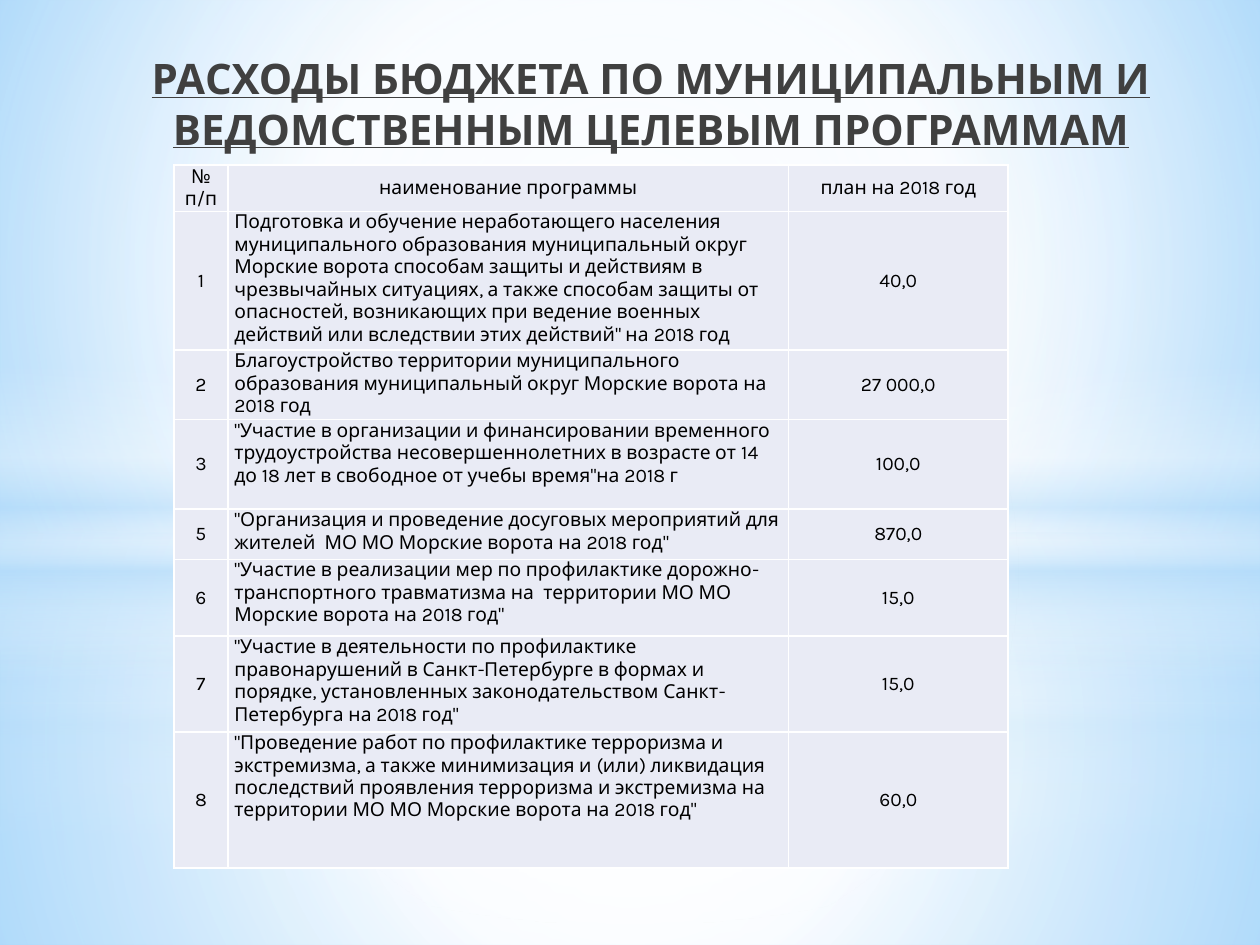
import pptx
import pptx.util
from pptx.dml.color import RGBColor
from pptx.enum.shapes import MSO_SHAPE
from pptx.enum.text import MSO_ANCHOR, PP_ALIGN
from pptx.oxml import parse_xml
from pptx.oxml.ns import nsdecls, qn

Inches = pptx.util.Inches
WIDTH, HEIGHT = 10, 7.5
FONT = "Karla"
COLORS = {
    "white": "FFFFFF", "haze": "B4DCFA", "sky": "9ED5FF", "deep": "5BB9FF",
    "title": "404040", "text": "000000", "cell": "E9EBF5",
}

TITLE = "РАСХОДЫ БЮДЖЕТА ПО МУНИЦИПАЛЬНЫМ И ВЕДОМСТВЕННЫМ ЦЕЛЕВЫМ ПРОГРАММАМ"
COLUMNS = [0.43, 4.45, 1.74]
HEADER = ("№ п/п", "наименование программы", "план на 2018 год")
HEADER_HEIGHT = 0.35
PROGRAMS = [  # row height, number, name, plan
    (1.07, "1", 'Подготовка и обучение неработающего населения муниципального образования '
     'муниципальный округ Морские ворота способам защиты и действиям в чрезвычайных '
     'ситуациях, а также способам защиты от опасностей, возникающих при ведение военных '
     'действий или вследствии этих действий" на 2018 год', "40,0"),
    (0.53, "2", 'Благоустройство территории муниципального образования муниципальный округ '
     'Морские ворота на 2018 год', "27 000,0"),
    (0.71, "3", '"Участие в организации и финансировании временного трудоустройства '
     'несовершеннолетних в возрасте от 14 до 18 лет в свободное от учебы время"на 2018 г',
     "100,0"),
    (0.4, "5", '"Организация и проведение досуговых мероприятий для жителей  МО МО '
     'Морские ворота на 2018 год"', "870,0"),
    (0.61, "6", '"Участие в реализации мер по профилактике дорожно-транспортного травматизма '
     'на  территории МО МО Морские ворота на 2018 год"', "15,0"),
    (0.76, "7", '"Участие в деятельности по профилактике правонарушений в Санкт-Петербурге '
     'в формах и порядке, установленных законодательством Санкт-Петербурга на 2018 год"',
     "15,0"),
    (1.08, "8", '"Проведение работ по профилактике терроризма и экстремизма, а также '
     'минимизация и (или) ликвидация последствий проявления терроризма и экстремизма на '
     'территории МО МО Морские ворота на 2018 год"', "60,0"),
]

# Gradient stops: position, colour, opacity (all in percent)
BACKGROUND = [(0, "sky", 100), (60, "white", 100), (100, "deep", 100)]
BAND = [(0, "white", 0), (29, "white", 30), (45, "haze", 40),
        (55, "white", 26), (65, "haze", 60), (100, "white", 0)]
CENTER = (50, 50, 50, 50)
# Each glow layer: horizon, band top, extra opacity, end of the ellipse's fade
GLOWS = [(5.58, 4.12, 0, 56), (4.23, 2.9, 1, 54)]


def paint_gradient(holder, stops, focus=None):
    """Swap the holder's solid fill for a radial gradient, or a vertical one without focus."""
    marks = "".join(
        f'<a:gs pos="{place * 1000}"><a:srgbClr val="{COLORS[color]}">'
        f'<a:alpha val="{opacity * 1000}"/></a:srgbClr></a:gs>'
        for place, color, opacity in stops)
    if focus:
        left, top, right, bottom = (share * 1000 for share in focus)
        course = (f'<a:path path="circle"><a:fillToRect l="{left}" t="{top}" '
                  f'r="{right}" b="{bottom}"/></a:path>')
    else:
        course = '<a:lin ang="5400000" scaled="0"/>'
    gradient = parse_xml(f'<a:gradFill {nsdecls("a")} rotWithShape="1">'
                         f'<a:gsLst>{marks}</a:gsLst>{course}</a:gradFill>')
    holder.replace(holder.find(qn("a:solidFill")), gradient)


def add_glow(page, kind, top, height, stops, focus=None):
    shape = page.shapes.add_shape(kind, 0, Inches(top), Inches(WIDTH), Inches(height))
    shape.shadow.inherit = False
    shape.line.fill.background()
    shape.fill.solid()
    paint_gradient(shape.element.spPr, stops, focus)


def write(frame, text, size=11, color="text", bold=False, underline=False,
          align=PP_ALIGN.CENTER):
    frame.word_wrap = True
    para = frame.paragraphs[0]
    para.alignment = align
    span = para.add_run()
    span.text = text
    font = span.font
    font.name, font.size = FONT, pptx.util.Pt(size)
    font.bold, font.underline = bold, underline
    font.color.rgb = RGBColor.from_string(COLORS[color])


def style_cell(cell):
    cell.margin_left = cell.margin_right = Inches(0.05)
    cell.margin_top = cell.margin_bottom = 0
    cell.fill.solid()
    cell.fill.fore_color.rgb = RGBColor.from_string(COLORS["cell"])
    properties = cell._tc.get_or_add_tcPr()
    for index, side in enumerate("LRTB"):
        properties.insert(index, parse_xml(
            f'<a:ln{side} {nsdecls("a")} w="12700"><a:solidFill>'
            f'<a:srgbClr val="{COLORS["white"]}"/></a:solidFill></a:ln{side}>'))


def add_programs(page):
    heights = [HEADER_HEIGHT] + [program[0] for program in PROGRAMS]
    rows = [HEADER] + [program[1:] for program in PROGRAMS]
    table = page.shapes.add_table(
        len(rows), len(COLUMNS), Inches(1.38), Inches(1.31),
        Inches(sum(COLUMNS)), Inches(sum(heights))).table
    table.first_row = table.horz_banding = False
    for column, width in zip(table.columns, COLUMNS):
        column.width = Inches(width)
    for r, (height, row) in enumerate(zip(heights, rows)):
        table.rows[r].height = Inches(height)
        for c, text in enumerate(row):
            cell = table.cell(r, c)
            is_name = r > 0 and c == 1
            style_cell(cell)
            cell.vertical_anchor = MSO_ANCHOR.TOP if is_name else MSO_ANCHOR.MIDDLE
            write(cell.text_frame, text,
                  align=PP_ALIGN.LEFT if is_name else PP_ALIGN.CENTER)


def main():
    deck = pptx.Presentation()
    deck.slide_width, deck.slide_height = Inches(WIDTH), Inches(HEIGHT)
    page = deck.slides.add_slide(deck.slide_layouts[6])

    page.background.fill.solid()
    paint_gradient(page.element.find(".//" + qn("p:bgPr")), BACKGROUND, (20, 10, 20, 60))
    for horizon, band_top, extra, fade in GLOWS:
        ground = [(0, "white", 91 + extra), (37, "white", 76 + extra), (100, "haze", 79 + extra)]
        heaven = [(0, "white", 89 + extra), (48, "white", 62 + extra), (100, "haze", 79 + extra)]
        add_glow(page, MSO_SHAPE.RECTANGLE, horizon, HEIGHT - horizon, ground, CENTER)
        add_glow(page, MSO_SHAPE.RECTANGLE, 0, horizon, heaven, CENTER)
        add_glow(page, MSO_SHAPE.RECTANGLE, band_top, 2.5, BAND)
        add_glow(page, MSO_SHAPE.OVAL, 1.75, 5.58,
                 [(0, "white", 100), (fade, "white", 0)], CENTER)

    box = page.shapes.add_textbox(Inches(0.34), Inches(0.99), Inches(9.65), Inches(1.02))
    frame = box.text_frame
    frame.vertical_anchor = MSO_ANCHOR.BOTTOM
    frame.margin_bottom = Inches(0.79)  # lifts the heading above the table
    write(frame, TITLE, size=24, color="title", bold=True, underline=True)

    add_programs(page)
    deck.save("out.pptx")


if __name__ == "__main__":
    main()
